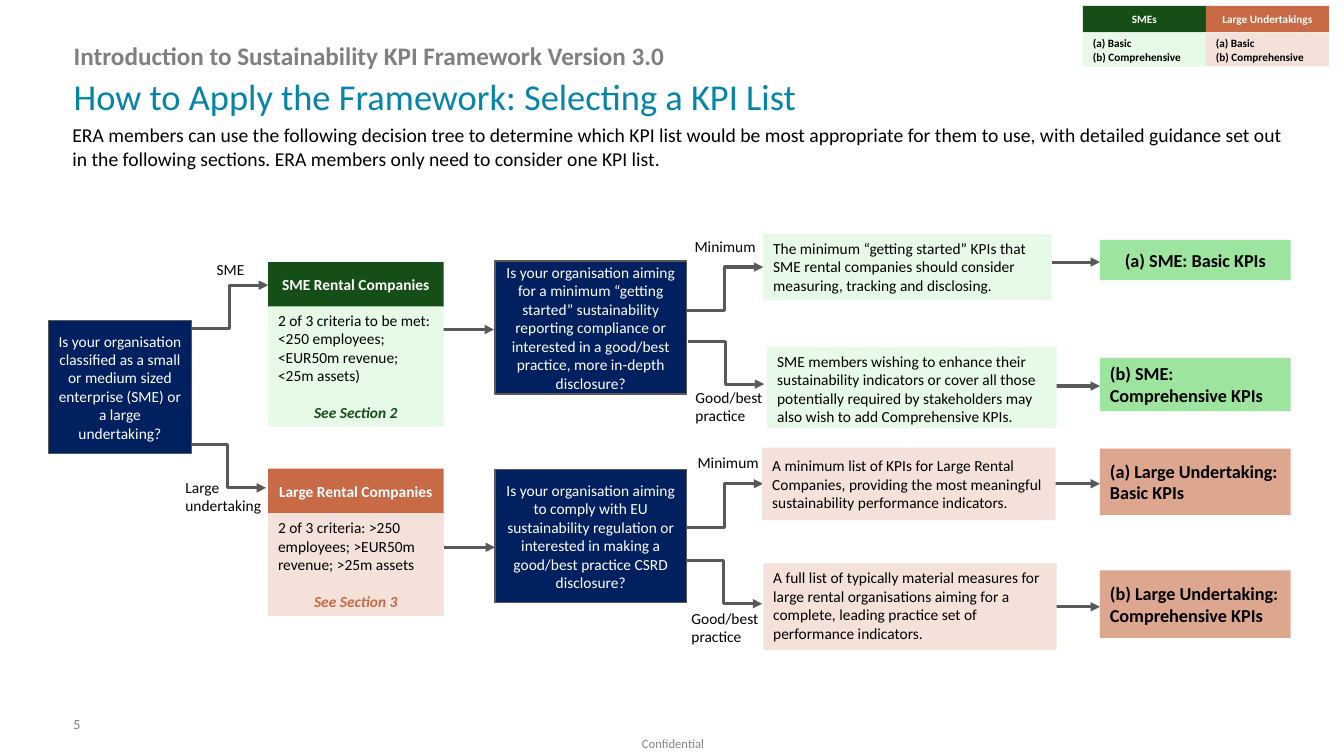
"""Build the slide with the decision tree for selecting a KPI list."""
import pptx
import pptx.util
import pptx.dml.color
import pptx.enum.shapes
import pptx.enum.text
import pptx.oxml.ns
import lxml.etree

RGBColor = pptx.dml.color.RGBColor
BLACK = RGBColor(0x00, 0x00, 0x00)
WHITE = RGBColor(0xFF, 0xFF, 0xFF)
GREY = RGBColor(0x80, 0x80, 0x80)
PALE = RGBColor(0x85, 0x85, 0x85)
SLATE = RGBColor(0x59, 0x59, 0x59)
TEAL = RGBColor(0x05, 0x84, 0xAA)
NAVY = RGBColor(0x00, 0x20, 0x60)
GREEN = RGBColor(0x15, 0x4F, 0x17)
LEAF = RGBColor(0x9D, 0xE5, 0x9F)
MINT = RGBColor(0xE7, 0xF9, 0xE7)
RUST = RGBColor(0xC7, 0x6A, 0x45)
CLAY = RGBColor(0xDD, 0xA6, 0x8F)
BLUSH = RGBColor(0xF4, 0xE1, 0xDA)

PX = 9144
LEFT = pptx.enum.text.PP_ALIGN.LEFT
CENTER = pptx.enum.text.PP_ALIGN.CENTER
TOP = pptx.enum.text.MSO_ANCHOR.TOP
MIDDLE = pptx.enum.text.MSO_ANCHOR.MIDDLE
RECT = pptx.enum.shapes.MSO_SHAPE.RECTANGLE
LINE = pptx.enum.shapes.MSO_CONNECTOR.STRAIGHT
BENT = pptx.enum.shapes.MSO_CONNECTOR.ELBOW


def write(shape, text, size, color, bold=False, align=LEFT, anchor=MIDDLE):
    """Fill a shape with text in one style."""
    frame = shape.text_frame
    frame.text = text
    frame.word_wrap = True
    frame.auto_size = pptx.enum.text.MSO_AUTO_SIZE.NONE
    frame.vertical_anchor = anchor
    for para in frame.paragraphs:
        para.alignment = align
        for run in para.runs:
            run.font.name = "Calibri"
            run.font.size = pptx.util.Pt(size)
            run.font.bold = bold
            run.font.color.rgb = color
    return frame


def box(area, text, fill, size=11, color=BLACK, bold=False, align=LEFT, anchor=MIDDLE):
    """Add a filled rectangle, or a plain text box when fill is None."""
    place = [n * PX for n in area]
    if fill is None:
        shape = slide.shapes.add_textbox(*place)
    else:
        shape = slide.shapes.add_shape(RECT, *place)
        shape.shadow.inherit = False
        shape.fill.solid()
        shape.fill.fore_color.rgb = fill
        shape.line.fill.background()
    write(shape, text, size, color, bold, align, anchor)
    return shape


deck = pptx.Presentation()
deck.slide_width = 1333 * PX
deck.slide_height = 750 * PX
slide = deck.slides.add_slide(deck.slide_layouts[1])

title, body = slide.placeholders
heads = [
    (title, (63, 40, 1206, 33), "Introduction to Sustainability KPI Framework Version 3.0",
     18, GREY, True, MIDDLE),
    (body, (63, 73, 1206, 89), "How to Apply the Framework: Selecting a KPI List",
     26, TEAL, False, TOP),
]
for shape, area, text, size, color, bold, anchor in heads:
    shape.left, shape.top, shape.width, shape.height = [n * PX for n in area]
    para = write(shape, text, size, color, bold, LEFT, anchor).paragraphs[0]
    props = para._p.get_or_add_pPr()
    props.set("marL", "0")
    props.set("indent", "0")
    lxml.etree.SubElement(props, pptx.oxml.ns.qn("a:buNone"))
    para.line_spacing = 0.9
    para.space_before = pptx.util.Pt(0)

box((62, 106, 1227, 79), "ERA members can use the following decision tree to determine which KPI list "
    "would be most appropriate for them to use, with detailed guidance set out in the following "
    "sections. ERA members only need to consider one KPI list.", None, 14)

links = [
    (LINE, 1043, 260, 1091, 260),
    (LINE, 1043, 383, 1091, 383),
    (LINE, 1043, 480, 1091, 480),
    (LINE, 1043, 602, 1091, 602),
    (LINE, 438, 327, 490, 327),
    (LINE, 440, 543, 491, 543),
    (BENT, 190, 326, 266, 283),
    (BENT, 188, 441, 264, 484),
    (BENT, 681, 308, 757, 265),
    (BENT, 682, 339, 758, 381),
    (BENT, 681, 523, 757, 480),
    (BENT, 680, 556, 756, 599),
]
for kind, *ends in links:
    link = slide.shapes.add_connector(kind, *[n * PX for n in ends])
    link.line.color.rgb = SLATE
    link.line.width = pptx.util.Pt(2.25)
    stroke = link.line._get_or_add_ln()
    lxml.etree.SubElement(stroke, pptx.oxml.ns.qn("a:tailEnd"), type="triangle")
    lxml.etree.SubElement(link._element.spPr, pptx.oxml.ns.qn("a:effectLst"))

asks = [
    ((48, 318, 142, 132), "Is your organisation classified as a small or medium sized enterprise "
     "(SME) or a large undertaking?"),
    ((491, 259, 190, 132), "Is your organisation aiming for a minimum “getting started” sustainability "
     "reporting compliance or interested in a good/best practice, more in-depth disclosure?"),
    ((491, 466, 190, 132), "Is your organisation aiming to comply with EU sustainability regulation or "
     "interested in making a good/best practice CSRD disclosure?"),
]
for area, text in asks:
    ask = box(area, text, NAVY, color=WHITE, align=CENTER)
    ask.line.color.rgb = SLATE
    ask.line.width = pptx.util.Pt(1)

groups = [
    (260, 119, "SME Rental Companies", GREEN, MINT,
     "2 of 3 criteria to be met: <250 employees; <EUR50m revenue; <25m assets)\nSee Section 2"),
    (465, 102, "Large Rental Companies", RUST, BLUSH,
     "2 of 3 criteria: >250 employees; >EUR50m revenue; >25m assets\nSee Section 3"),
]
for top, high, name, dark, light, text in groups:
    box((266, top, 174, 45), name, dark, color=WHITE, bold=True, align=CENTER)
    card = box((266, top + 44, 174, high), text, light)
    note = card.text_frame.paragraphs[1]
    note.alignment = CENTER
    note.space_before = pptx.util.Pt(13.4)
    font = note.runs[0].font
    font.bold = font.italic = True
    font.color.rgb = dark

guides = [
    ((757, 232, 286, 66), MINT, TOP, "The minimum “getting started” KPIs that SME rental companies "
     "should consider measuring, tracking and disclosing."),
    ((761, 344, 287, 81), MINT, TOP, "SME members wishing to enhance their sustainability indicators "
     "or cover all those potentially required by stakeholders may also wish to add Comprehensive KPIs."),
    ((756, 444, 291, 72), BLUSH, MIDDLE, "A minimum list of KPIs for Large Rental Companies, providing "
     "the most meaningful sustainability performance indicators."),
    ((757, 559, 291, 86), BLUSH, TOP, "A full list of typically material measures for large rental "
     "organisations aiming for a complete, leading practice set of performance indicators."),
]
for area, fill, anchor, text in guides:
    box(area, text, fill, anchor=anchor)

lists = [
    (238, 40, LEAF, CENTER, "(a) SME: Basic KPIs"),
    (355, 53, LEAF, LEFT, "(b) SME: Comprehensive KPIs"),
    (445, 66, CLAY, LEFT, "(a) Large Undertaking: Basic KPIs"),
    (566, 67, CLAY, LEFT, "(b) Large Undertaking: Comprehensive KPIs"),
]
for top, high, fill, align, text in lists:
    box((1091, top, 189, high), text, fill, 13, bold=True, align=align)

labels = [
    ((205, 253, 57, 29), "SME"),
    ((174, 469, 105, 47), "Large undertaking"),
    ((679, 230, 82, 29), "Minimum"),
    ((680, 380, 94, 47), "Good/best practice"),
    ((682, 445, 82, 29), "Minimum"),
    ((676, 599, 94, 47), "Good/best practice"),
]
for area, text in labels:
    box(area, text, None, anchor=TOP)

keys = [(1074, "SMEs", GREEN, MINT), (1196, "Large Undertakings", RUST, BLUSH)]
for left, name, dark, light in keys:
    box((left, 6, 122, 26), name, dark, 8, WHITE, True, CENTER)
    box((left, 33, 122, 33), "(a) Basic\n(b) Comprehensive", light, 8, bold=True)

box((63, 698, 297, 40), "5", None, 10, GREY)
foot = box((626, 725, 83, 25), "Confidential", None, 9, PALE, align=CENTER, anchor=TOP)
foot.text_frame.word_wrap = False

deck.save("out.pptx")
